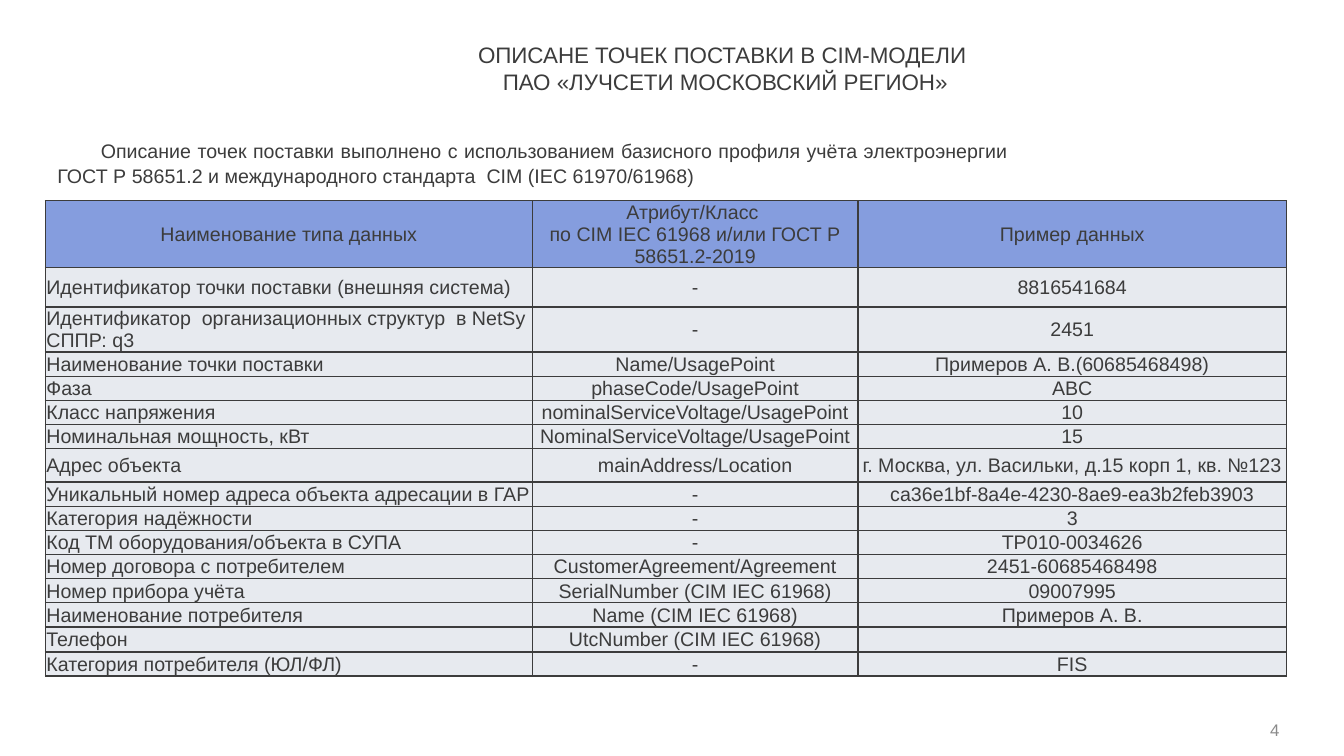
from dataclasses import dataclass

from lxml import etree
from pptx import Presentation
from pptx import util as u
from pptx.dml.color import RGBColor
from pptx.enum import text
from pptx.oxml.ns import qn

FONT = "Arial"
INK, GREY = "3C3C3C", "8A8A8A"
HEADER_FILL, BODY_FILL = "859DDE", "E7EAEF"
LEFT, CENTER = text.PP_ALIGN.LEFT, text.PP_ALIGN.CENTER
RIGHT, JUSTIFY = text.PP_ALIGN.RIGHT, text.PP_ALIGN.JUSTIFY
TOP, MIDDLE = text.MSO_ANCHOR.TOP, text.MSO_ANCHOR.MIDDLE


@dataclass
class Row:
    name: str
    attribute: str
    example: str
    height: float = 0.24


@dataclass
class Box:
    left: float
    top: float
    width: float
    height: float
    content: str
    style: dict
    inset: float = 0.05
    anchor: text.MSO_ANCHOR = TOP


HEADER = Row("Наименование типа данных",
             "Атрибут/Класс \nпо CIM IEC 61968 и/или ГОСТ Р 58651.2-2019",
             "Пример данных", 0.45)
ROWS = [
    HEADER,
    Row("Идентификатор точки поставки (внешняя система)", "-", "8816541684", 0.39),
    Row("Идентификатор  организационных структур  в NetSy СППР: q3", "-", "2451"),
    Row("Наименование точки поставки", "Name/UsagePoint", "Примеров А. В.(60685468498)"),
    Row("Фаза", "phaseCode/UsagePoint", "ABC"),
    Row("Класс напряжения", "nominalServiceVoltage/UsagePoint", "10"),
    Row("Номинальная мощность, кВт", "NominalServiceVoltage/UsagePoint", "15"),
    Row("Адрес объекта", "mainAddress/Location",
        "г. Москва, ул. Васильки, д.15 корп 1, кв. №123", 0.33),
    Row("Уникальный номер адреса объекта адресации в ГАР", "-",
        "ca36e1bf-8a4e-4230-8ae9-ea3b2feb3903"),
    Row("Категория надёжности", "-", "3"),
    Row("Код ТМ оборудования/объекта в СУПА", "-", "TP010-0034626"),
    Row("Номер договора с потребителем", "CustomerAgreement/Agreement", "2451-60685468498"),
    Row("Номер прибора учёта", "SerialNumber (CIM IEC 61968)", "09007995"),
    Row("Наименование потребителя", "Name (CIM IEC 61968)", "Примеров А. В."),
    Row("Телефон", "UtcNumber (CIM IEC 61968)", ""),
    Row("Категория потребителя (ЮЛ/ФЛ)", "-", "FIS"),
]
COLUMN_WIDTHS = [4.83, 3.23, 4.25]

BOXES = [
    Box(2.51, 0.36, 9.37, 0.64,
        "ОПИСАНЕ ТОЧЕК ПОСТАВКИ В CIM-МОДЕЛИ \nПАО «ЛУЧСЕТИ МОСКОВСКИЙ РЕГИОН»",
        dict(size=16, align=CENTER)),
    Box(0.52, 1.31, 9.53, 0.57,
        "Описание точек поставки выполнено с использованием базисного профиля учёта "
        "электроэнергии ГОСТ Р 58651.2 и международного стандарта  CIM (IEC 61970/61968)",
        dict(align=JUSTIFY, indent=0.43, spacing=1.07)),
    Box(12.12, 7.15, 0.57, 0.18, "4",
        dict(size=12, color=GREY, align=RIGHT), inset=0, anchor=MIDDLE),
]


def rgb(value: str) -> RGBColor:
    return RGBColor.from_string(value)


def write(tf, content: str, *, size: float = 14, color: str = INK,
          align=LEFT, indent: float = 0, spacing: float = 1) -> None:
    """Fill a text frame, one paragraph for each line of content."""
    for i, line in enumerate(content.split("\n")):
        p = tf.paragraphs[0] if i == 0 else tf.add_paragraph()
        p.alignment = align
        if spacing != 1:
            p.line_spacing = spacing
        if indent:
            p._p.get_or_add_pPr().set("indent", str(u.Inches(indent)))
        if not line:  # keeps an empty line at the text size
            etree.SubElement(p._p, qn("a:endParaRPr"), sz=str(size * 100))
            continue
        r = p.add_run()
        r.text = line
        r.font.name, r.font.size = FONT, u.Pt(size)
        r.font.color.rgb = rgb(color)


def add_box(slide, box: Box) -> None:
    sp = slide.shapes.add_textbox(*map(u.Inches, (box.left, box.top, box.width, box.height)))
    tf = sp.text_frame
    tf.word_wrap = True
    tf.vertical_anchor = box.anchor
    tf.margin_left = tf.margin_right = tf.margin_top = tf.margin_bottom = u.Inches(box.inset)
    write(tf, box.content, **box.style)


def format_cell(cell, fill: str) -> None:
    cell.margin_left = cell.margin_right = cell.margin_top = u.Inches(0.01)
    cell.margin_bottom = 0
    cell.vertical_anchor = MIDDLE
    tcPr = cell._tc.get_or_add_tcPr()
    for side in ("lnL", "lnR", "lnT", "lnB"):
        ln = etree.SubElement(tcPr, qn(f"a:{side}"), w=str(u.Pt(1)))
        solid = etree.SubElement(ln, qn("a:solidFill"))
        etree.SubElement(solid, qn("a:srgbClr"), val=INK)
    cell.fill.solid()
    cell.fill.fore_color.rgb = rgb(fill)


def add_data_table(slide) -> None:
    table = slide.shapes.add_table(
        len(ROWS), len(COLUMN_WIDTHS), u.Inches(0.45), u.Inches(1.99),
        u.Inches(sum(COLUMN_WIDTHS)), u.Inches(sum(r.height for r in ROWS))).table
    table.first_row = table.horz_banding = False
    for column, width in zip(table.columns, COLUMN_WIDTHS):
        column.width = u.Inches(width)
    for i, row in enumerate(ROWS):
        table.rows[i].height = u.Inches(row.height)
        is_header = row is HEADER
        for j, content in enumerate((row.name, row.attribute, row.example)):
            cell = table.cell(i, j)
            format_cell(cell, HEADER_FILL if is_header else BODY_FILL)
            write(cell.text_frame, content, align=CENTER if is_header or j else LEFT)


def main() -> None:
    prs = Presentation()
    prs.slide_width, prs.slide_height = u.Inches(13.33), u.Inches(7.5)
    slide = prs.slides.add_slide(prs.slide_layouts[6])

    # Data table
    add_data_table(slide)

    # Title, introduction and page number
    for box in BOXES:
        add_box(slide, box)

    prs.save("out.pptx")


if __name__ == "__main__":
    main()
